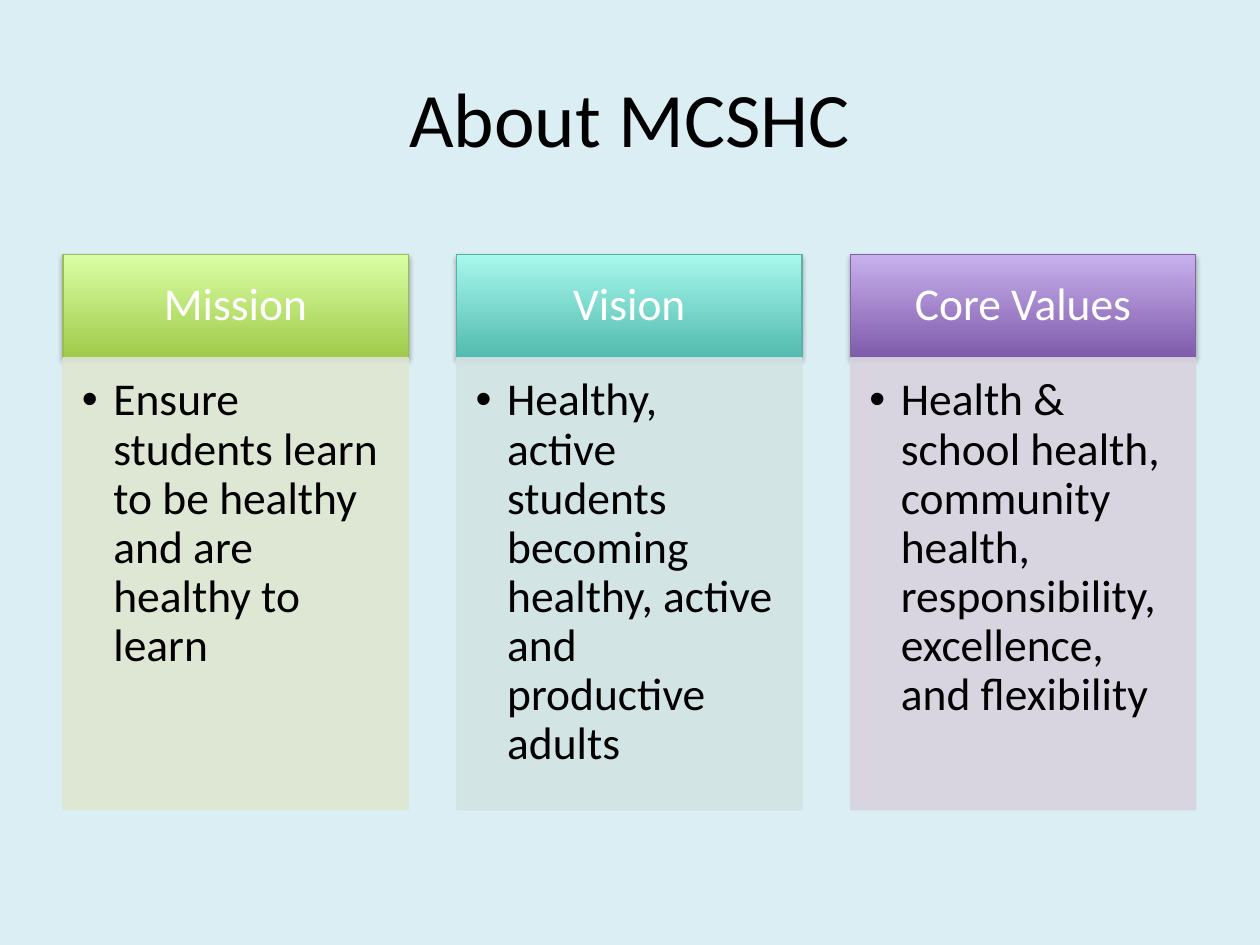
from lxml.etree import SubElement
from pptx import Presentation
from pptx.dml.color import RGBColor
from pptx.enum.shapes import MSO_SHAPE as Shape
from pptx.enum.text import MSO_ANCHOR as Anchor, PP_ALIGN as Align
from pptx.oxml.ns import qn
from pptx.util import Pt

COLORS = {"background": "DBEEF4", "text": "000000", "heading": "FFFFFF"}
COLUMNS = [
    ("Mission", "Ensure students learn to be healthy and are healthy to learn",
     {"dark": "A0CA4A", "light": "DAFFA5", "line": "9BBB59", "body": "DEE7D1"}),
    ("Vision", "Healthy, active students becoming healthy, active and productive adults",
     {"dark": "52BBAF", "light": "A8F8ED", "line": "5EAFA6", "body": "D2E3E2"}),
    ("Core Values", "Health & school health, community health, responsibility, "
     "excellence, and flexibility",
     {"dark": "7F5BAB", "light": "C8B0ED", "line": "8064A2", "body": "D8D3E0"}),
]
LEFT, TOP, WIDTH, STEP = 36, 145.3, 197.3, 225
HEAD_HEIGHT, BODY_HEIGHT = 59.2, 258.3


def add_box(left, top, height, line_color):
    shape = slide.shapes.add_shape(
        Shape.RECTANGLE, Pt(left), Pt(top), Pt(WIDTH), Pt(height))
    shape.shadow.inherit = False
    shape.line.color.rgb = RGBColor.from_string(line_color)
    shape.line.width = Pt(0.75)
    return shape


def write_text(shape, text, size, color, align, anchor, margins):
    frame = shape.text_frame
    frame.text = text
    frame.word_wrap = True
    frame.vertical_anchor = anchor
    (frame.margin_left, frame.margin_top,
     frame.margin_right, frame.margin_bottom) = map(Pt, margins)
    paragraph = frame.paragraphs[0]
    paragraph.alignment = align
    font = paragraph.runs[0].font
    font.name = "Calibri"
    font.size = Pt(size)
    font.color.rgb = RGBColor.from_string(COLORS[color])
    return paragraph


presentation = Presentation()
presentation.slide_width = Pt(720)
presentation.slide_height = Pt(540)
slide = presentation.slides.add_slide(presentation.slide_layouts[6])
slide.background.fill.solid()
slide.background.fill.fore_color.rgb = RGBColor.from_string(COLORS["background"])

title = slide.shapes.add_textbox(Pt(36), Pt(21.6), Pt(648), Pt(90))
write_text(title, "About MCSHC", 44, "text", Align.CENTER, Anchor.MIDDLE,
           (7.2, 3.6, 7.2, 3.6))

for index, (heading, description, palette) in enumerate(COLUMNS):
    left = LEFT + index * STEP

    header = add_box(left, TOP, HEAD_HEIGHT, palette["line"])
    header.fill.gradient()
    header.fill.gradient_angle = 90
    for stop, tone, position in zip(header.fill.gradient_stops, ("dark", "light"), (0, 1)):
        stop.color.rgb = RGBColor.from_string(palette[tone])
        stop.position = position
    effects = header._element.spPr.find(qn("a:effectLst"))
    shadow = SubElement(effects, qn("a:outerShdw"), blurRad=str(Pt(3.1)),
                        dist=str(Pt(1.8)), dir="5400000", rotWithShape="0")
    shadow_color = SubElement(shadow, qn("a:srgbClr"), val=COLORS["text"])
    SubElement(shadow_color, qn("a:alpha"), val="35000")
    paragraph = write_text(header, heading, 26, "heading", Align.CENTER,
                           Anchor.MIDDLE, (14.4, 8.64, 14.4, 8.64))
    paragraph.line_spacing = 0.9

    body = add_box(left, TOP + HEAD_HEIGHT, BODY_HEIGHT, palette["body"])
    body.fill.solid()
    body.fill.fore_color.rgb = RGBColor.from_string(palette["body"])
    for color in body._element.spPr.iter(qn("a:srgbClr")):
        SubElement(color, qn("a:alpha"), val="90000")
    paragraph = write_text(body, description, 26, "text", Align.LEFT,
                           Anchor.TOP, (10.8, 10.8, 14.4, 16.56))
    paragraph.line_spacing = 0.9
    properties = paragraph._p.get_or_add_pPr()
    properties.set("marL", str(Pt(18)))
    properties.set("indent", str(Pt(-18)))
    SubElement(properties, qn("a:buFont"), typeface="Arial")
    SubElement(properties, qn("a:buChar"), char="•")

presentation.save("out.pptx")
